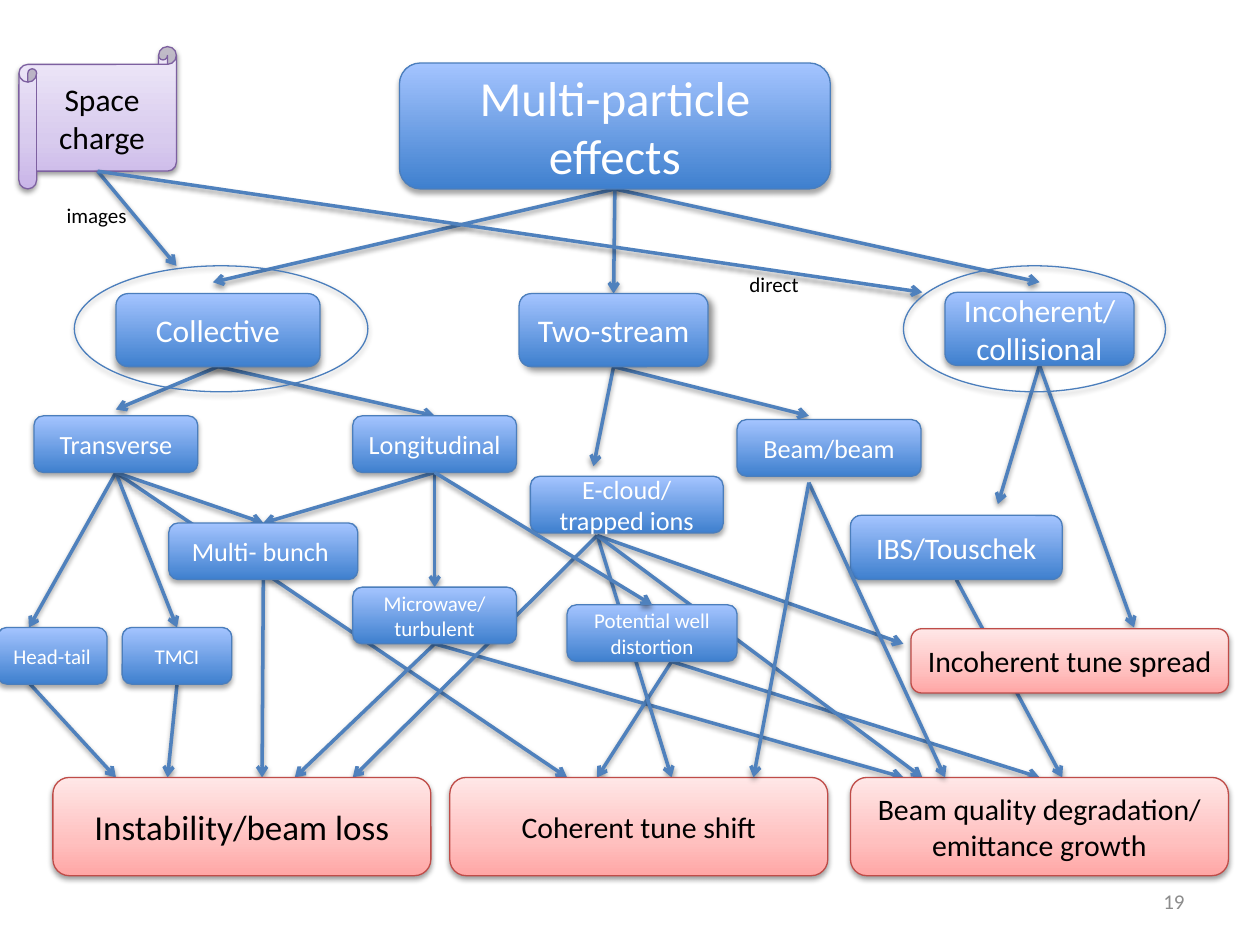
from pptx import Presentation
from pptx.dml.color import RGBColor
from pptx.enum.shapes import MSO_CONNECTOR, MSO_SHAPE
from pptx.enum.text import MSO_ANCHOR, PP_ALIGN
from pptx.oxml import parse_xml
from pptx.oxml.ns import nsdecls
from pptx.util import Inches, Pt

WHITE = RGBColor(0xFF, 0xFF, 0xFF)
BLACK = RGBColor(0, 0, 0)
GREY = RGBColor(0x8C, 0x8C, 0x8C)
ARROW_BLUE = RGBColor(0x4F, 0x81, 0xBD)
EDGE_BLUE = RGBColor(0x4B, 0x7E, 0xBC)
EDGE_RED = RGBColor(0xBF, 0x4C, 0x48)
EDGE_PURPLE = RGBColor(0x7D, 0x60, 0xA0)
BLUE_STOPS = [(0, RGBColor(0x3F, 0x80, 0xCE)), (100, RGBColor(0xA4, 0xC4, 0xFF))]
RED_STOPS = [(0, RGBColor(0xFF, 0xA6, 0xA5)), (35, RGBColor(0xFF, 0xC0, 0xBF)),
             (100, RGBColor(0xFF, 0xE7, 0xE7))]
PURPLE_STOPS = [(0, RGBColor(0xC9, 0xB5, 0xE8)), (35, RGBColor(0xD8, 0xCB, 0xEE)),
                (100, RGBColor(0xF0, 0xEA, 0xF9))]
BOX = MSO_SHAPE.FLOWCHART_ALTERNATE_PROCESS
BLUE = (BLUE_STOPS, EDGE_BLUE, WHITE, (35, 3.1, 1.8, 90))
RED = (RED_STOPS, EDGE_RED, BLACK, (38, 3.1, 1.6, 90))
PURPLE = (PURPLE_STOPS, EDGE_PURPLE, BLACK, (38, 3.1, 1.6, 90))
TOP, BOTTOM = 0, 2

EFFECTS = {
    "title": ("Multi-particle effects", 28, (3.17, 0.5, 3.42, 1)),
    "collective": ("Collective", 18, (0.92, 2.33, 1.62, 0.58)),
    "incoherent": ("Incoherent/collisional", 18, (7.5, 2.32, 1.5, 0.58)),
    "two-stream": ("Two-stream", 18, (4.12, 2.33, 1.5, 0.58)),
    "transverse": ("Transverse", 15, (0.27, 3.3, 1.3, 0.45)),
    "longitudinal": ("Longitudinal", 15, (2.8, 3.3, 1.3, 0.45)),
    "head-tail": ("Head-tail", 12, (-0.02, 4.98, 0.87, 0.45)),
    "tmci": ("TMCI", 12, (0.97, 4.98, 0.87, 0.45)),
    "e-cloud": ("E-cloud/trapped ions", 15, (4.21, 3.78, 1.53, 0.45)),
    "beam-beam": ("Beam/beam", 15, (5.85, 3.33, 1.46, 0.45)),
    "ibs": ("IBS/Touschek", 17, (6.75, 4.09, 1.68, 0.51)),
    "well": ("Potential well distortion", 12, (4.5, 4.8, 1.35, 0.45)),
    "microwave": ("Microwave/turbulent", 12, (2.8, 4.66, 1.3, 0.45)),
    "multi-bunch": ("Multi- bunch ", 15, (1.34, 4.15, 1.5, 0.45)),
}
OUTCOMES = {
    "loss": ("Instability/beam loss", 20, (0.42, 6.17, 3, 0.78)),
    "degradation": ("Beam quality degradation/ emittance growth", 17, (6.75, 6.17, 3, 0.78)),
    "shift": ("Coherent tune shift", 17, (3.57, 6.17, 3, 0.78)),
    "spread": ("Incoherent tune spread", 17, (7.23, 4.99, 2.52, 0.51)),
}
ARROWS_BEHIND = {
    "title": [(8.25, 2.24), (1.69, 2.24), "two-stream"],
    "collective": [(0.92, 3.25), "longitudinal"],
    "incoherent": [(7.92, 4), (9, 4.98)],
    "two-stream": [(4.71, 3.7), (6.42, 3.3)],
    "transverse": [(4.5, 6.17), (0.23, 4.98), "tmci", "multi-bunch"],
    "longitudinal": ["microwave", "multi-bunch"],
    "multi-bunch": [(2.08, 6.17)],
    "microwave": [(2.34, 6.17), (7.17, 6.17)],
    "ibs": [(8.43, 6.17)],
    "tmci": [(1.33, 6.17)],
    (0.23, 5.42): [(0.92, 6.17)],
    (5.33, 5.25): [(4.74, 6.17), "degradation"],
    (4.74, 4.25): [(2.8, 6.17), (5.33, 6.17), (7.17, 5.11), (7.32, 6.17)],
}
ARROWS_IN_FRONT = {
    "longitudinal": ["well"],
    (6.42, 3.83): [(7.5, 6.17), (5.98, 6.17)],
}


def inches(values):
    return [Inches(value) for value in values]


def add_shadow(part, alpha, blur, distance, angle):
    part._element.spPr.append(parse_xml(
        f'<a:effectLst {nsdecls("a")}><a:outerShdw blurRad="{Pt(blur)}" dist="{Pt(distance)}" '
        f'dir="{angle * 60000}" rotWithShape="0"><a:srgbClr val="000000">'
        f'<a:alpha val="{alpha * 1000}"/></a:srgbClr></a:outerShdw></a:effectLst>'))


def fill_gradient(part, stops):
    part.fill.background()
    stop_xml = "".join(f'<a:gs pos="{position * 1000}"><a:srgbClr val="{color}"/></a:gs>'
                       for position, color in stops)
    no_fill = part._element.spPr.find("{*}noFill")
    no_fill.getparent().replace(no_fill, parse_xml(
        f'<a:gradFill {nsdecls("a")} rotWithShape="1"><a:gsLst>{stop_xml}</a:gsLst>'
        '<a:lin ang="16200000" scaled="0"/></a:gradFill>'))


def write_text(frame, text, size, color, align):
    frame.text = text
    paragraph = frame.paragraphs[0]
    paragraph.alignment = align
    paragraph.font.name = "Calibri"
    paragraph.font.size = Pt(size)
    paragraph.font.color.rgb = color


def add_node(slide, preset, text, size, box, style, shadow=None):
    stops, edge, text_color, style_shadow = style
    node = slide.shapes.add_shape(preset, *inches(box))
    fill_gradient(node, stops)
    node.line.color.rgb = edge
    node.line.width = Pt(0.75)
    add_shadow(node, *(shadow or style_shadow))
    node.text_frame.word_wrap = True
    node.text_frame.vertical_anchor = MSO_ANCHOR.MIDDLE
    write_text(node.text_frame, text, size, text_color, PP_ALIGN.CENTER)
    return node


def add_arrow(slide, start, end, nodes):
    points = [(0, 0) if isinstance(spot, str) else spot for spot in (start, end)]
    arrow = slide.shapes.add_connector(MSO_CONNECTOR.STRAIGHT, *inches(points[0] + points[1]))
    if isinstance(start, str):
        arrow.begin_connect(nodes[start], BOTTOM)
    if isinstance(end, str):
        arrow.end_connect(nodes[end], TOP)
    arrow.line.color.rgb = ARROW_BLUE
    arrow.line.width = Pt(2)
    arrow.line._get_or_add_ln().append(parse_xml(f'<a:tailEnd {nsdecls("a")} type="arrow"/>'))
    add_shadow(arrow, 38, 3.1, 1.6, 90)
    return arrow


def add_label(slide, text, box, color=BLACK, align=PP_ALIGN.LEFT, anchor=MSO_ANCHOR.TOP):
    label = slide.shapes.add_textbox(*inches(box))
    label.text_frame.word_wrap = align == PP_ALIGN.RIGHT
    label.text_frame.vertical_anchor = anchor
    write_text(label.text_frame, text, 12, color, align)


def add_ring(slide, box):
    ring = slide.shapes.add_shape(MSO_SHAPE.OVAL, *inches(box))
    ring.fill.background()
    ring.line.color.rgb = EDGE_BLUE
    ring.line.width = Pt(0.75)
    add_shadow(ring, 35, 3.1, 1.8, 90)


def add_effect_tree(slide):
    special_shadows = {"collective": (43, 4, 3, 90), "two-stream": (43, 4, 3, 45)}
    nodes = {}
    for entries, style in ((EFFECTS, BLUE), (OUTCOMES, RED)):
        for key, (text, size, box) in entries.items():
            nodes[key] = add_node(slide, BOX, text, size, box, style, special_shadows.get(key))
    first_node = nodes["title"]._element
    for start, ends in ARROWS_BEHIND.items():
        for end in ends:
            first_node.addprevious(add_arrow(slide, start, end, nodes)._element)
    for start, ends in ARROWS_IN_FRONT.items():
        for end in ends:
            add_arrow(slide, start, end, nodes)


def add_space_charge(slide, box):
    left, top, width, height = box
    add_node(slide, MSO_SHAPE.HORIZONTAL_SCROLL, "Space charge", 18, box, PURPLE)
    source = (left + width / 2, top + height * 7 / 8)
    for target, ring, label, label_box in (
            ((1.4, 2.11), (0.59, 2.11, 2.33, 1), "images", (0.43, 1.56, 0.69, 0.3)),
            ((7.32, 2.32), (7.17, 2.11, 2.08, 1), "direct", (5.85, 2.11, 0.6, 0.3))):
        add_arrow(slide, source, target, {})
        add_ring(slide, ring)
        add_label(slide, label, label_box)


def main():
    deck = Presentation()
    deck.slide_width, deck.slide_height = Inches(10), Inches(7.5)
    slide = deck.slides.add_slide(deck.slide_layouts[6])
    add_label(slide, "19", (7.17, 6.95, 2.33, 0.4), GREY, PP_ALIGN.RIGHT, MSO_ANCHOR.MIDDLE)
    add_effect_tree(slide)
    add_space_charge(slide, (0.15, 0.37, 1.25, 1.13))
    deck.save("out.pptx")


if __name__ == "__main__":
    main()
